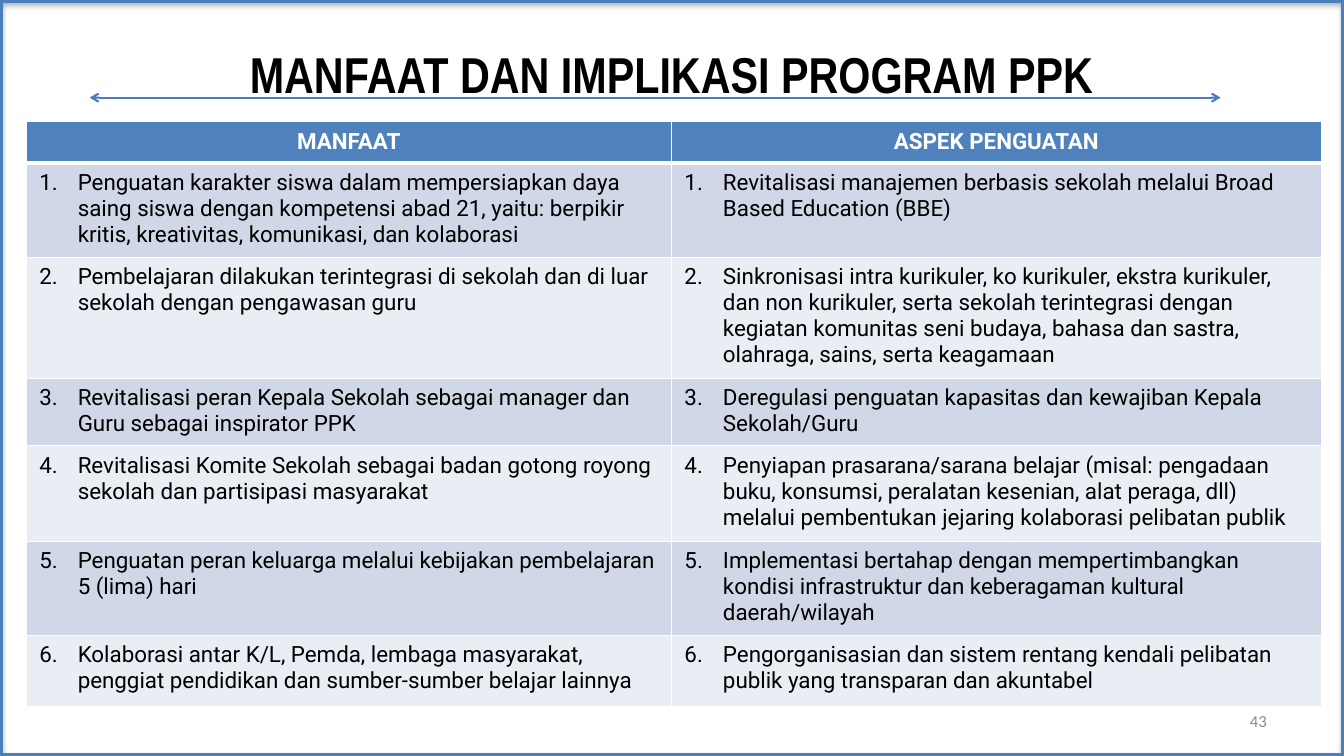
import dataclasses
import typing

import pptx
import pptx.dml.color
import pptx.enum.shapes
import pptx.enum.text
import pptx.oxml
import pptx.oxml.ns
import pptx.util

Cm = pptx.util.Cm
Pt = pptx.util.Pt
Align = pptx.enum.text.PP_ALIGN
Anchor = pptx.enum.text.MSO_ANCHOR

BLUE, WHITE, BLACK = "4B7EBC", "FFFFFF", "000000"
HEAD, BANDS = "4F81BD", ("D0D8E8", "E9EDF4")
WIDTH, HEIGHT = 33.87, 19.05
INDENT = 0.97
TITLES = ("MANFAAT", "ASPEK PENGUATAN")
COLS = (16.26, 16.38)
HEAD_TALL = 1.04


@dataclasses.dataclass(frozen=True)
class Label:
    text: str
    box: tuple[float, float, float, float]
    font: dict[str, typing.Any]
    color: str
    para: dict[str, typing.Any]


@dataclasses.dataclass(frozen=True)
class Point:
    gain: str
    aspect: str
    tall: float


LABELS = (
    Label("43", (24.28, 17.65, 7.9, 1.02), {"name": "Calibri", "size": Pt(12)},
          "8C8C8C", {"alignment": Align.RIGHT}),
    Label("MANFAAT DAN IMPLIKASI PROGRAM PPK", (2.54, 0.79, 28.78, 1.83),
          {"name": "Arial Narrow", "size": Pt(36), "bold": True},
          BLACK, {"alignment": Align.CENTER, "line_spacing": 1.2}),
)

POINTS = (
    Point("Penguatan karakter siswa dalam mempersiapkan daya saing siswa dengan kompetensi "
          "abad 21, yaitu: berpikir kritis, kreativitas, komunikasi, dan kolaborasi",
          "Revitalisasi manajemen berbasis sekolah melalui Broad Based Education (BBE)", 2.36),
    Point("Pembelajaran dilakukan terintegrasi di sekolah dan di luar sekolah dengan "
          "pengawasan guru",
          "Sinkronisasi intra kurikuler, ko kurikuler, ekstra kurikuler, dan non kurikuler, "
          "serta sekolah terintegrasi dengan kegiatan komunitas seni budaya, bahasa dan "
          "sastra, olahraga, sains, serta keagamaan", 3.05),
    Point("Revitalisasi peran Kepala Sekolah sebagai manager dan Guru sebagai inspirator PPK",
          "Deregulasi penguatan kapasitas dan kewajiban Kepala Sekolah/Guru", 1.7),
    Point("Revitalisasi Komite Sekolah sebagai badan gotong royong sekolah dan partisipasi "
          "masyarakat",
          "Penyiapan prasarana/sarana belajar (misal: pengadaan buku, konsumsi, peralatan "
          "kesenian, alat peraga, dll) melalui pembentukan jejaring kolaborasi pelibatan "
          "publik", 2.41),
    Point("Penguatan peran keluarga melalui kebijakan pembelajaran 5 (lima) hari",
          "Implementasi bertahap dengan mempertimbangkan kondisi infrastruktur dan "
          "keberagaman kultural daerah/wilayah", 2.36),
    Point("Kolaborasi antar K/L, Pemda, lembaga masyarakat, penggiat pendidikan dan "
          "sumber-sumber belajar lainnya",
          "Pengorganisasian dan sistem rentang kendali pelibatan publik yang transparan dan "
          "akuntabel", 1.78),
)


def rgb(code: str) -> pptx.dml.color.RGBColor:
    return pptx.dml.color.RGBColor.from_string(code)


def apply(target: typing.Any, values: dict[str, typing.Any]) -> None:
    for name, value in values.items():
        setattr(target, name, value)


def node(xml: str) -> typing.Any:
    """Parse one element, given without its opening bracket and prefix."""
    return pptx.oxml.parse_xml(f"<a:{xml.replace(' ', ' ' + pptx.oxml.ns.nsdecls('a') + ' ', 1)}")


def write(para: typing.Any, text: str, font: dict[str, typing.Any], color: str) -> None:
    run = para.add_run()
    run.text = text
    apply(run.font, font)
    run.font.color.rgb = rgb(color)


def add_label(slide: typing.Any, label: Label) -> None:
    frame = slide.shapes.add_textbox(*map(Cm, label.box)).text_frame
    apply(frame, {"word_wrap": True, "vertical_anchor": Anchor.MIDDLE})
    para = frame.paragraphs[0]
    apply(para, label.para)
    write(para, label.text, label.font, label.color)


def add_frame(slide: typing.Any) -> None:
    rect = slide.shapes.add_shape(
        pptx.enum.shapes.MSO_SHAPE.RECTANGLE, 0, 0, Cm(WIDTH), Cm(HEIGHT))
    rect.fill.background()
    rect.line.color.rgb = rgb(BLUE)
    rect.line.width = Pt(4.5)
    rect.shadow.inherit = False
    shade = node(f'outerShdw blurRad="{Pt(3.1)}" dist="{Pt(1.8)}" dir="5400000" rotWithShape="0">'
                 f'<a:srgbClr val="{BLACK}"><a:alpha val="35000"/></a:srgbClr></a:outerShdw>')
    rect.element.spPr.find(pptx.oxml.ns.qn("a:effectLst")).append(shade)


def add_arrow(slide: typing.Any) -> None:
    arrow = slide.shapes.add_connector(
        pptx.enum.shapes.MSO_CONNECTOR.STRAIGHT, Cm(2.26), Cm(2.46), Cm(30.76), Cm(2.46))
    arrow.line.color.rgb = rgb(BLUE)
    arrow.line.width = Pt(1.5)
    pen = arrow.line._get_or_add_ln()
    for end in ("headEnd", "tailEnd"):
        pen.append(node(f'{end} type="arrow"/>'))
    arrow.element.spPr.append(node("effectLst />"))


def fill_cell(cell: typing.Any, fill: str, edges: dict[str, float]) -> typing.Any:
    """Style a cell and return its paragraph."""
    apply(cell, {"margin_left": Cm(0.33), "margin_right": Cm(0.33),
                 "margin_top": Cm(0.17), "margin_bottom": Cm(0.17)})
    cell.fill.solid()
    cell.fill.fore_color.rgb = rgb(fill)
    props = cell._tc.get_or_add_tcPr()
    for spot, (side, width) in enumerate(edges.items()):
        props.insert(spot, node(
            f'ln{side} w="{Pt(width)}"><a:solidFill><a:srgbClr val="{WHITE}"/>'
            f'</a:solidFill></a:ln{side}>'))
    return cell.text_frame.paragraphs[0]


def number(para: typing.Any, value: int) -> None:
    props = para._p.get_or_add_pPr()
    props.set("marL", str(Cm(INDENT)))
    props.set("indent", str(-Cm(INDENT)))
    props.append(node('buFont typeface="+mj-lt"/>'))
    props.append(node(f'buAutoNum type="arabicPeriod" startAt="{value}"/>'))


def add_grid(slide: typing.Any) -> None:
    talls = [HEAD_TALL] + [point.tall for point in POINTS]
    grid = slide.shapes.add_table(
        len(talls), len(COLS), Cm(0.66), Cm(3.07), Cm(sum(COLS)), Cm(sum(talls))).table
    for col, width in zip(grid.columns, COLS):
        col.width = Cm(width)
    for row, tall in zip(grid.rows, talls):
        row.height = Cm(tall)

    font = {"name": "Roboto", "size": Pt(16)}
    for col, title in enumerate(TITLES):
        para = fill_cell(grid.cell(0, col), HEAD, {"L": 1, "R": 1, "T": 1, "B": 3})
        para.alignment = Align.CENTER
        write(para, title, font | {"bold": True}, WHITE)
    for row, point in enumerate(POINTS, 1):
        edges = {"L": 1, "R": 1, "T": 3 if row == 1 else 1, "B": 1}
        for col, text in enumerate((point.gain, point.aspect)):
            para = fill_cell(grid.cell(row, col), BANDS[(row - 1) % 2], edges)
            number(para, row)
            write(para, text, font | {"bold": False}, BLACK)


def main() -> None:
    deck = pptx.Presentation()
    apply(deck, {"slide_width": Cm(WIDTH), "slide_height": Cm(HEIGHT)})
    slide = deck.slides.add_slide(deck.slide_layouts[6])
    page, title = LABELS
    add_label(slide, page)
    add_frame(slide)
    add_label(slide, title)
    add_arrow(slide)
    add_grid(slide)
    deck.save("out.pptx")


if __name__ == "__main__":
    main()
